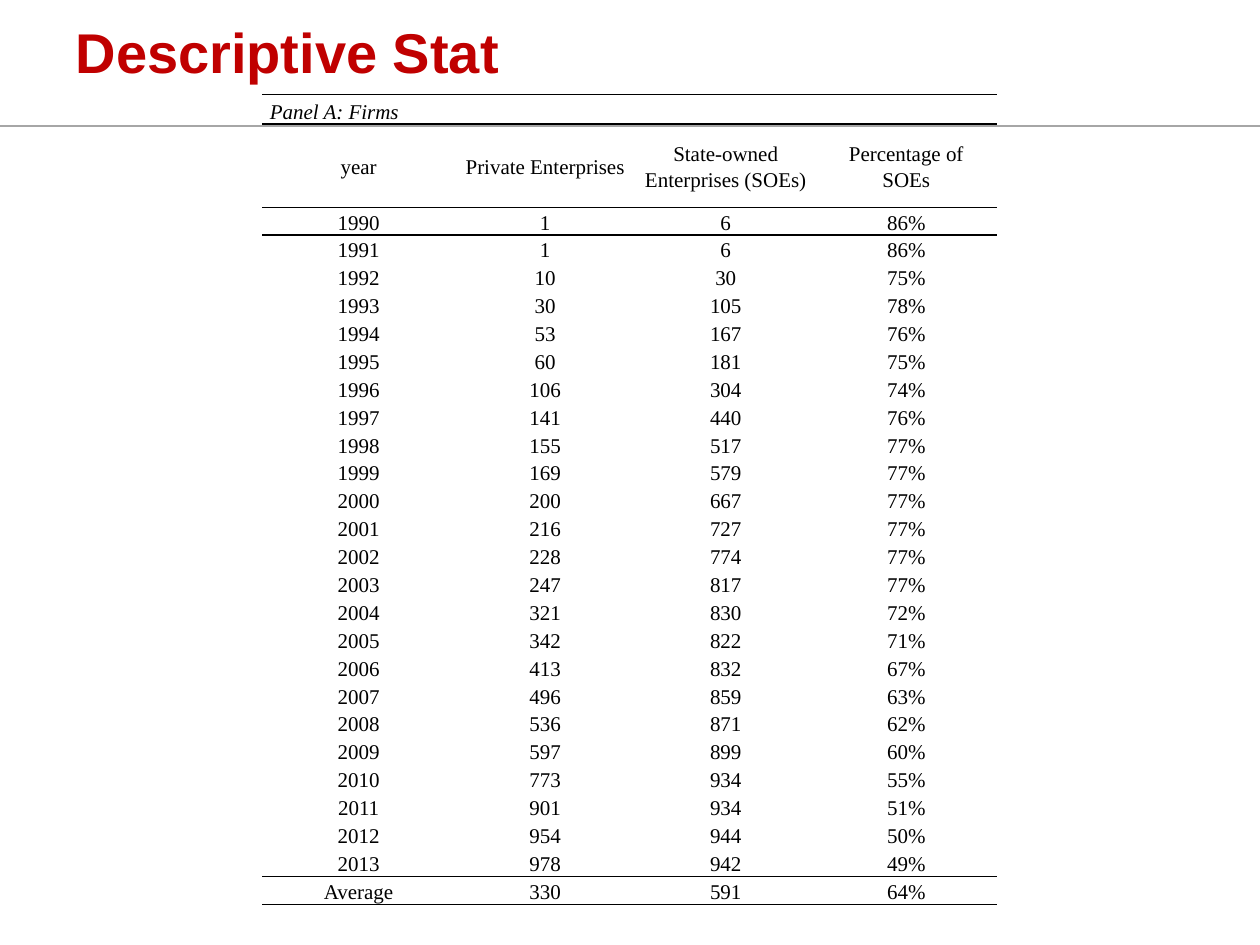
import pptx
import pptx.dml.color
import pptx.enum.shapes
import pptx.enum.text
import pptx.oxml.ns
import pptx.util
import lxml.etree

Cm = pptx.util.Cm
Pt = pptx.util.Pt
PP_ALIGN = pptx.enum.text.PP_ALIGN
MSO_ANCHOR = pptx.enum.text.MSO_ANCHOR
qn = pptx.oxml.ns.qn


def color(value):
    return pptx.dml.color.RGBColor.from_string(value)


def add_border(cell, edge):
    border = lxml.etree.Element(qn(f"a:{edge}"), w=str(Pt(1)))
    fill = lxml.etree.SubElement(border, qn("a:solidFill"))
    lxml.etree.SubElement(fill, qn("a:srgbClr"), val="000000")
    cell._tc.get_or_add_tcPr().insert(0, border)


prs = pptx.Presentation()
prs.slide_width = Cm(25.4)
prs.slide_height = Cm(19.05)
slide = prs.slides.add_slide(prs.slide_layouts[5])

title = slide.shapes.title
title.left, title.top = Cm(1.27), Cm(-0.2)
title.width, title.height = Cm(22.86), Cm(2.46)
title.text_frame.vertical_anchor = MSO_ANCHOR.MIDDLE
heading = title.text_frame.paragraphs[0]
heading.alignment = PP_ALIGN.LEFT
run = heading.add_run()
run.text = "Descriptive Stat"
run.font.name = "Arial"
run.font.size = Pt(32)
run.font.bold = True
run.font.color.rgb = color("C00000")

divider = slide.shapes.add_connector(
    pptx.enum.shapes.MSO_CONNECTOR.STRAIGHT, 0, Cm(2.54), prs.slide_width, Cm(2.54))
divider.line.color.rgb = color("A6A6A6")
divider.line.width = Pt(1)
lxml.etree.SubElement(divider._element.spPr, qn("a:effectLst"))

firms = [
    ("Panel A: Firms", "", "", ""),
    ("year", "Private Enterprises", "State-owned Enterprises (SOEs)", "Percentage of SOEs"),
    ("1990", "1", "6", "86%"),
    ("1991", "1", "6", "86%"),
    ("1992", "10", "30", "75%"),
    ("1993", "30", "105", "78%"),
    ("1994", "53", "167", "76%"),
    ("1995", "60", "181", "75%"),
    ("1996", "106", "304", "74%"),
    ("1997", "141", "440", "76%"),
    ("1998", "155", "517", "77%"),
    ("1999", "169", "579", "77%"),
    ("2000", "200", "667", "77%"),
    ("2001", "216", "727", "77%"),
    ("2002", "228", "774", "77%"),
    ("2003", "247", "817", "77%"),
    ("2004", "321", "830", "72%"),
    ("2005", "342", "822", "71%"),
    ("2006", "413", "832", "67%"),
    ("2007", "496", "859", "63%"),
    ("2008", "536", "871", "62%"),
    ("2009", "597", "899", "60%"),
    ("2010", "773", "934", "55%"),
    ("2011", "901", "934", "51%"),
    ("2012", "954", "944", "50%"),
    ("2013", "978", "942", "49%"),
    ("Average", "330", "591", "64%"),
]
last = len(firms) - 1
panel_height, header_height, body_height = Cm(0.6), Cm(1.68), Cm(14.05)
frame = slide.shapes.add_table(
    len(firms), 4, Cm(5.29), Cm(1.9), Cm(14.8), panel_height + header_height + body_height)
table = frame.table
table.first_row = False
table.horz_banding = False
no_style_no_grid = "{2D5ABB26-0587-4C30-8999-92F81FD0307C}"
table._tbl.tblPr.find(qn("a:tableStyleId")).text = no_style_no_grid

for column, width in zip(table.columns, (3.88, 3.64, 3.64, 3.64)):
    column.width = Cm(width)
heights = [panel_height, header_height] + [body_height // (last - 1)] * (last - 1)
for row, height in zip(table.rows, heights):
    row.height = height
table.cell(0, 0).merge(table.cell(0, 3))

for r, values in enumerate(firms):
    for c, value in enumerate(values):
        cell = table.cell(r, c)
        cell.fill.background()
        if r in (0, 1, last - 1, last):
            add_border(cell, "lnB")
        if r in (0, 1, 2, last):
            add_border(cell, "lnT")
        cell.margin_left = cell.margin_right = Cm(0.15)
        cell.margin_top = cell.margin_bottom = 0
        cell.vertical_anchor = MSO_ANCHOR.MIDDLE if r else MSO_ANCHOR.BOTTOM
        if not value:
            continue
        paragraph = cell.text_frame.paragraphs[0]
        paragraph.alignment = PP_ALIGN.CENTER if r else PP_ALIGN.LEFT
        paragraph.line_spacing = 1.15
        run = paragraph.add_run()
        run.text = value
        run.font.name = "Times New Roman"
        run.font.size = Pt(12)
        run.font.italic = r == 0
        run.font.color.rgb = color("000000")

prs.save("out.pptx")
